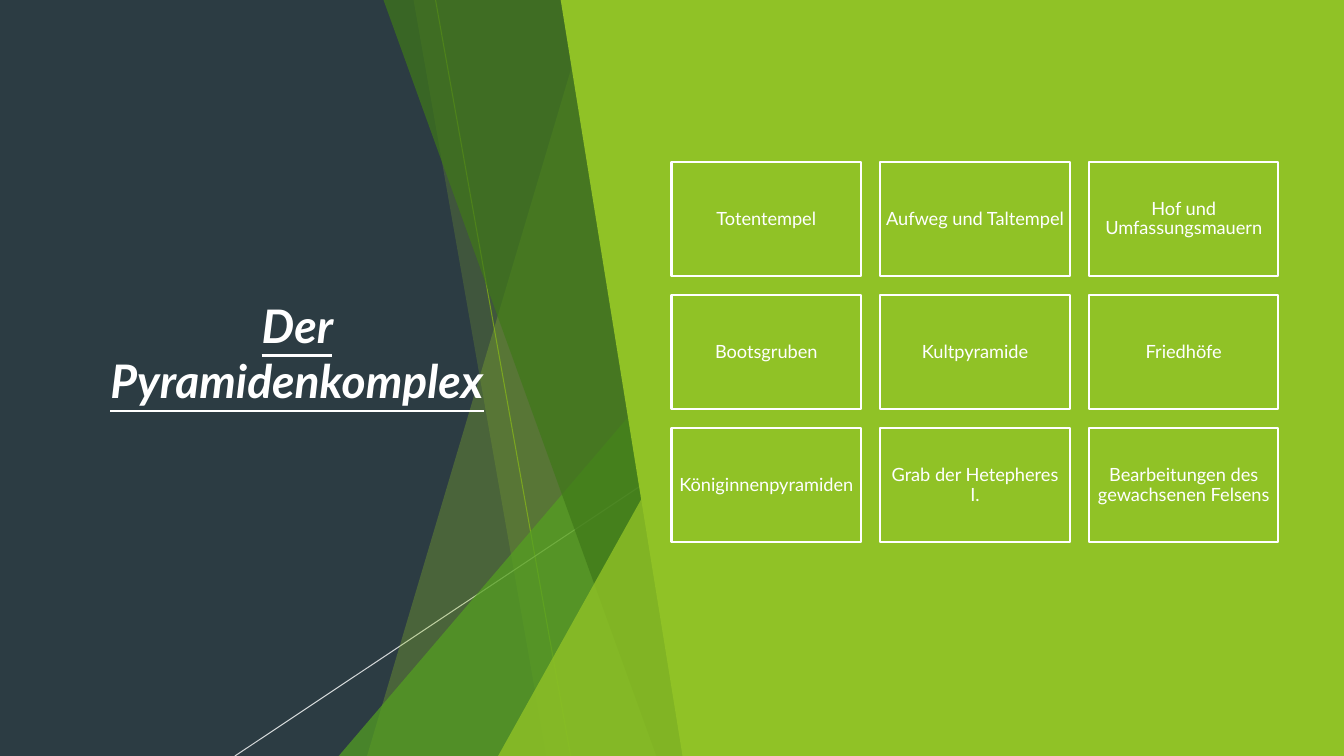
from pptx import Presentation
from pptx.dml.color import RGBColor
from pptx.enum.shapes import MSO_CONNECTOR, MSO_SHAPE
from pptx.enum.text import MSO_ANCHOR, PP_ALIGN
from pptx.oxml.ns import qn
from pptx.util import Inches, Pt
from lxml.etree import SubElement

SLATE = RGBColor(0x2C, 0x3C, 0x43)
LIME = RGBColor(0x90, 0xC2, 0x26)
GREEN = RGBColor(0x54, 0xA0, 0x21)
FOREST = RGBColor(0x3F, 0x78, 0x19)
OLIVE = RGBColor(0x6C, 0x92, 0x1D)
WHITE = RGBColor(0xFF, 0xFF, 0xFF)

TOP, BOTTOM = -0.01, 7.5


def set_alpha(sp, percent):
    color = next(sp._element.spPr.iter(qn("a:srgbClr")))
    SubElement(color, qn("a:alpha")).set("val", str(percent * 1000))


def write(tf, text, margin, line_spacing, font):
    frame = {"word_wrap": True, "vertical_anchor": MSO_ANCHOR.MIDDLE,
             "margin_left": margin, "margin_right": margin,
             "margin_top": Inches(0.05), "margin_bottom": Inches(0.05)}
    for name, value in frame.items():
        setattr(tf, name, value)
    p = tf.paragraphs[0]
    p.alignment = PP_ALIGN.CENTER
    p.line_spacing = line_spacing
    r = p.add_run()
    r.text = text
    r.font.color.rgb = WHITE
    for name, value in {"name": "Lato", **font}.items():
        setattr(r.font, name, value)


prs = Presentation()
prs.slide_width, prs.slide_height = Inches(13.33), Inches(7.5)
s = prs.slides.add_slide(prs.slide_layouts[6])
s.background.fill.solid()
s.background.fill.fore_color.rgb = SLATE

lines = [
    ((4.32, 0, 5.66, 7.5), OLIVE, 100),
    ((7.54, 4.03, 2.33, 7.5), WHITE, 80),
]
for ends, color, alpha in lines:
    sp = s.shapes.add_connector(MSO_CONNECTOR.STRAIGHT, *map(Inches, ends))
    sp.line.color.rgb = color
    sp.line.width = Pt(0.75)
    set_alpha(sp, alpha)
    SubElement(sp._element.spPr, qn("a:effectLst"))

facets = [
    ("band", (5.87, 6.92, 6.92, 3.64), LIME, 30),
    ("band", (4.1, 6.93, 6.93, 5.42), LIME, 20),
    ("triangle", (3.36, 3.33, 3.56, 4.17), GREEN, 72),
    ("band", (3.8, 6.92, 6.92, 6.51), FOREST, 70),
    ("triangle", (4.94, 3.93, 1.99, 3.57), LIME, 80),
    ("band", (5.56, 13.33, 13.33, 6.77), LIME, 100),
]
for kind, values, color, alpha in facets:
    values = [Inches(v) for v in values]
    if kind == "triangle":
        sp = s.shapes.add_shape(MSO_SHAPE.ISOSCELES_TRIANGLE, *values)
        sp.adjustments[0] = 1
    else:
        ys = map(Inches, (TOP, TOP, BOTTOM, BOTTOM))
        start, *rest = zip(values, ys)
        outline = s.shapes.build_freeform(*start)
        outline.add_line_segments(rest, close=True)
        sp = outline.convert_to_shape()
    sp.shadow.inherit = False
    sp.fill.solid()
    sp.fill.fore_color.rgb = color
    sp.line.fill.background()
    set_alpha(sp, alpha)

title = s.shapes.add_textbox(Inches(0.74), Inches(0.67), Inches(4.41), Inches(5.66))
write(title.text_frame, "Der Pyramidenkomplex", Inches(0.1), 1.0,
      {"size": Pt(33), "bold": True, "italic": True, "underline": True})

cards = [
    ["Totentempel", "Aufweg und Taltempel", "Hof und Umfassungsmauern"],
    ["Bootsgruben", "Kultpyramide", "Friedhöfe"],
    ["Königinnenpyramiden", "Grab der Hetepheres I.",
     "Bearbeitungen des gewachsenen Felsens"],
]
for row, labels in enumerate(cards):
    for col, label in enumerate(labels):
        sp = s.shapes.add_shape(
            MSO_SHAPE.RECTANGLE, Inches(6.66 + 2.07 * col),
            Inches(1.61 + 1.32 * row), Inches(1.88), Inches(1.13))
        sp.shadow.inherit = False
        sp.fill.solid()
        sp.fill.fore_color.rgb = LIME
        sp.line.color.rgb = WHITE
        sp.line.width = Pt(1.5)
        write(sp.text_frame, label, Inches(0.05), 0.9, {"size": Pt(13)})

prs.save("out.pptx")
